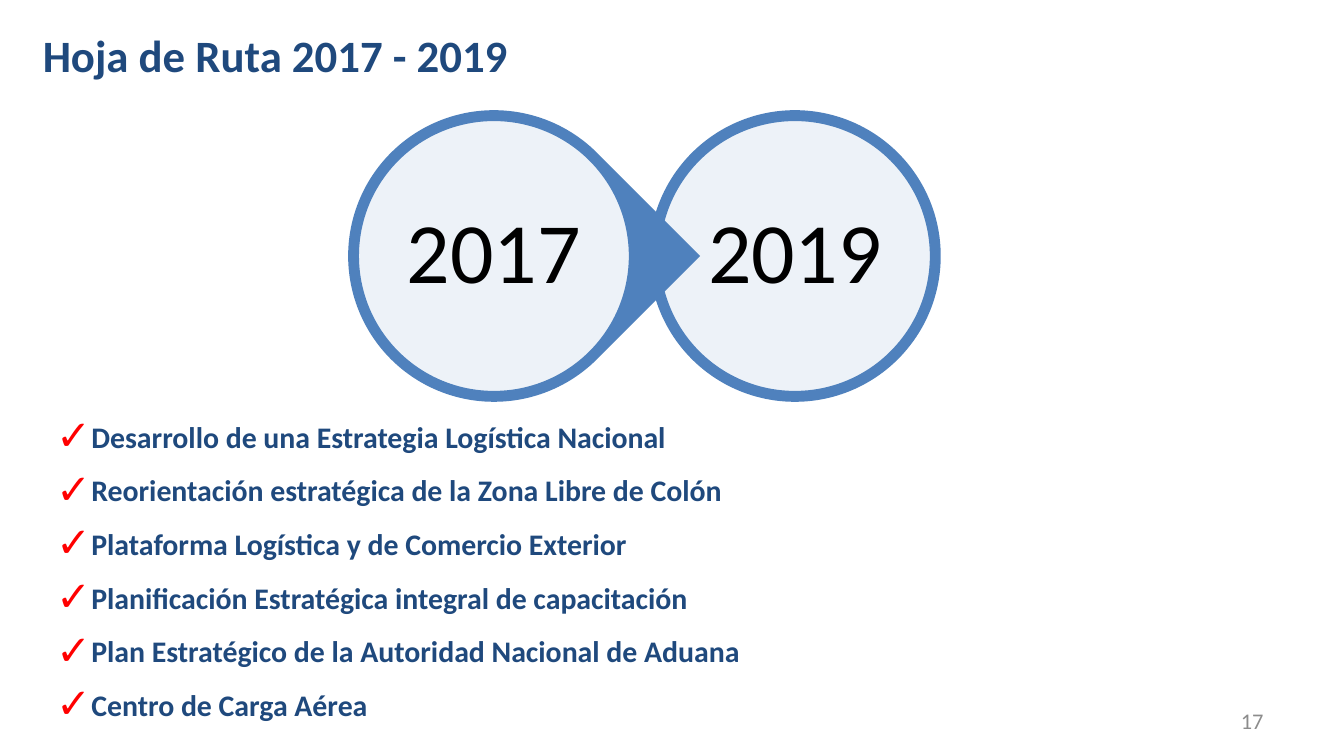
import dataclasses

import lxml.etree
import pptx
import pptx.dml.color
import pptx.enum.shapes
import pptx.enum.text
import pptx.oxml.ns
import pptx.util

SHAPE = pptx.enum.shapes.MSO_SHAPE
ALIGN = pptx.enum.text.PP_ALIGN
ANCHOR = pptx.enum.text.MSO_ANCHOR
AUTO = pptx.enum.text.MSO_AUTO_SIZE
CELL = 0.1


@dataclasses.dataclass(frozen=True)
class Theme:
    """Colours, type sizes and the font of the slide."""
    font: str = "Calibri"
    navy: str = "1F497D"
    blue: str = "4F81BD"
    white: str = "FFFFFF"
    black: str = "000000"
    grey: str = "8C8C8C"
    red: str = "FF0000"
    title: int = 24
    year: int = 46
    item: int = 16
    number: int = 12


@dataclasses.dataclass(frozen=True)
class Box:
    """A rectangle in grid columns and rows."""
    x: float
    y: float
    w: float
    h: float

    def emu(self):
        """Return left, top, width and height as lengths."""
        return [pptx.util.Inches(v * CELL) for v in (self.x, self.y, self.w, self.h)]

    def centred(self, share):
        """Return the concentric box of the given share."""
        gap = (1 - share) / 2
        return Box(self.x + self.w * gap, self.y + self.h * gap,
                   self.w * share, self.h * share)


THEME = Theme()
ITEMS = (
    "Desarrollo de una Estrategia Logística Nacional",
    "Reorientación estratégica de la Zona Libre de Colón",
    "Plataforma Logística y de Comercio Exterior",
    "Planificación Estratégica integral de capacitación",
    "Plan Estratégico de la Autoridad Nacional de Aduana",
    "Centro de Carga Aérea",
)


def rgb(value):
    """Turn a hex value into a colour."""
    return pptx.dml.color.RGBColor.from_string(value)


def apply(target, values):
    """Set each attribute of the target."""
    for name, value in values.items():
        setattr(target, name, value)


def add_child(parent, tag, **attrs):
    """Append a drawing element with attributes."""
    return lxml.etree.SubElement(parent, pptx.oxml.ns.qn(tag), attrs)


def add_text(s, box, lines, size, color, bold=False, frame=None, para=None):
    """Place a text box and return its paragraphs."""
    tf = s.shapes.add_textbox(*box.emu()).text_frame
    apply(tf, {"word_wrap": True, **(frame or {})})
    for i, line in enumerate(lines):
        p = tf.paragraphs[0] if i == 0 else tf.add_paragraph()
        apply(p, para or {})
        r = p.add_run()
        r.text = line
        apply(r.font, {"name": THEME.font, "size": pptx.util.Pt(size), "bold": bold})
        r.font.color.rgb = rgb(color)
    return tf.paragraphs


def add_filled(s, kind, box, color):
    """Place a flat shape without an outline."""
    sp = s.shapes.add_shape(kind, *box.emu())
    sp.shadow.inherit = False
    sp.fill.solid()
    sp.fill.fore_color.rgb = rgb(color)
    sp.line.fill.background()
    return sp


def add_year(s, box, year, kind, rotation=0):
    """Draw a ring with a pale disc and a year inside."""
    add_filled(s, kind, box, THEME.blue).rotation = rotation
    disc = add_filled(s, SHAPE.OVAL, box.centred(0.93), THEME.white)
    color = next(disc.fill._xPr.iter(pptx.oxml.ns.qn("a:srgbClr")))
    add_child(color, "a:alpha", val="90000")
    disc.line.color.rgb = rgb(THEME.blue)
    disc.line.width = pptx.util.Pt(0.75)
    inset = pptx.util.Inches(0.06)
    frame = {f"margin_{side}": inset for side in ("left", "top", "right", "bottom")}
    add_text(s, box.centred(0.67), [year], THEME.year, THEME.black,
             frame={"vertical_anchor": ANCHOR.MIDDLE, **frame},
             para={"alignment": ALIGN.CENTER, "line_spacing": 0.9})


def add_timeline(s, box):
    """Draw the two years, the first pointing at the second."""
    left = Box(box.x, box.y, box.h, box.h)
    right = Box(box.x + box.w - box.h, box.y, box.h, box.h)
    add_year(s, right, "2019", SHAPE.OVAL)
    add_year(s, left, "2017", SHAPE.TEAR, 45)


def add_title(s, box):
    """Place the slide title."""
    add_text(s, box, ["Hoja de Ruta 2017 - 2019"], THEME.title, THEME.navy, True,
             frame={"auto_size": AUTO.SHAPE_TO_FIT_TEXT})


def add_checklist(s, box):
    """Place the list of goals with red check marks."""
    paragraphs = add_text(s, box, ITEMS, THEME.item, THEME.navy, True,
                          frame={"auto_size": AUTO.SHAPE_TO_FIT_TEXT},
                          para={"alignment": ALIGN.JUSTIFY, "line_spacing": 1.5})
    indent = pptx.util.Inches(0.19)
    for p in paragraphs:
        pr = p._p.get_or_add_pPr()
        pr.set("marL", str(indent))
        pr.set("indent", str(-indent))
        add_child(add_child(pr, "a:buClr"), "a:srgbClr", val=THEME.red)
        add_child(pr, "a:buSzPct", val="140000")
        add_child(pr, "a:buFont", typeface=THEME.font)
        add_child(pr, "a:buChar", char="✓")


def add_number(s, box):
    """Place the slide number."""
    add_text(s, box, ["17"], THEME.number, THEME.grey,
             frame={"vertical_anchor": ANCHOR.MIDDLE},
             para={"alignment": ALIGN.RIGHT})


def main():
    """Build and save the slide."""
    prs = pptx.Presentation()
    prs.slide_width = pptx.util.Inches(10)
    prs.slide_height = prs.slide_width * 9 // 16
    s = prs.slides.add_slide(prs.slide_layouts[6])
    add_timeline(s, Box(25.9, 8.2, 44.1, 21.7))
    add_number(s, Box(71.7, 52.1, 23.3, 3))
    add_title(s, Box(2.2, 1.6, 75.7, 5))
    add_checklist(s, Box(3.2, 29.3, 84.9, 32.3))
    prs.save("out.pptx")


if __name__ == "__main__":
    main()
